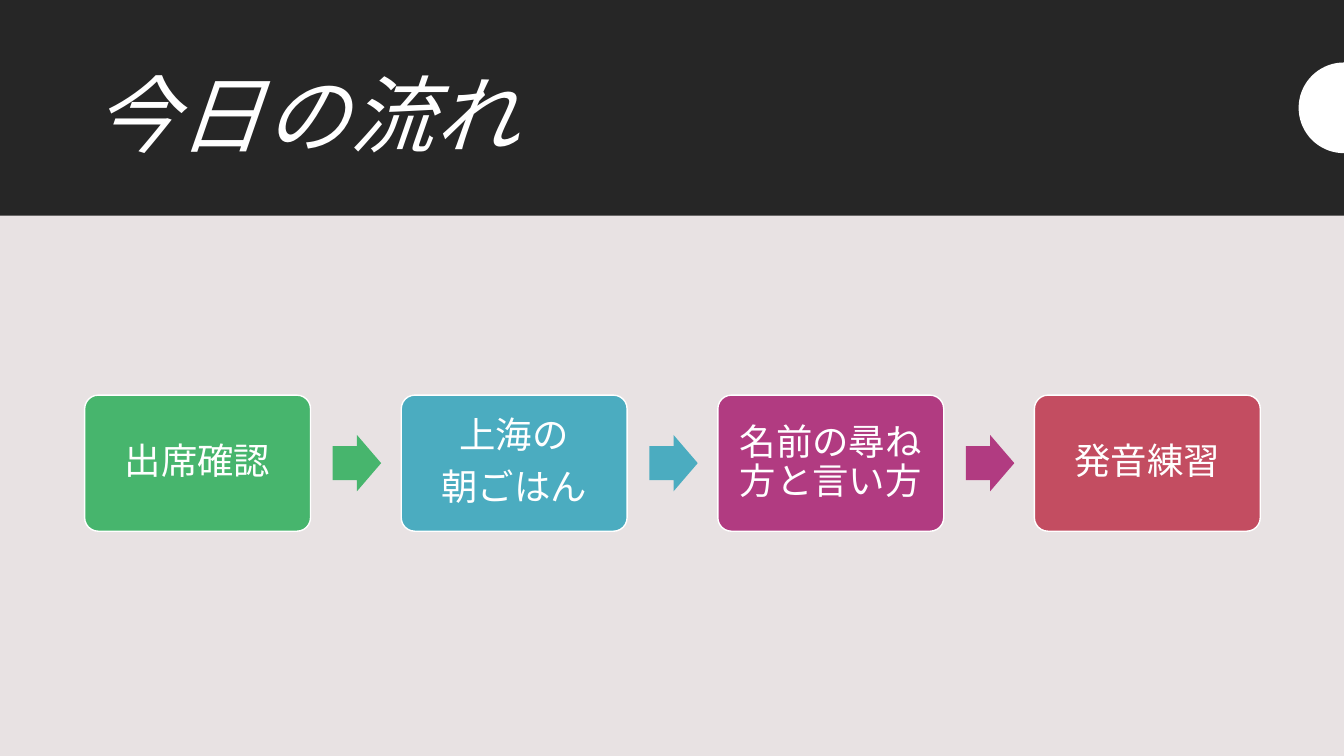
import math

from pptx import Presentation
from pptx.dml.color import RGBColor
from pptx.enum import lang, shapes, text
from pptx.util import Inches, Pt

DARK, PALE, WHITE = "262626", "E8E2E3", "FFFFFF"
STEPS = [
    ("出席確認", "47B56D"),
    ("上海の\n朝ごはん", "4BACC0"),
    ("名前の尋ね方と言い方", "B13B81"),
    ("発音練習", "C34D61"),
]
STEP_LEFT, STEP_TOP, STEP_WIDTH, STEP_HEIGHT = 0.84, 3.92, 2.24, 1.35
STEP_PITCH = 3.14
ARROW_OFFSET, ARROW_WIDTH, ARROW_HEIGHT = 2.46, 0.48, 0.56


def paint(part, fill, line=None):
    part.shadow.inherit = False
    part.fill.solid()
    part.fill.fore_color.rgb = RGBColor.from_string(fill)
    if line:
        part.line.color.rgb = RGBColor.from_string(line)
        part.line.width = Pt(1)
    else:
        part.line.fill.background()


def add_block(slide, kind, left, top, width, height, fill, line=None):
    block = slide.shapes.add_shape(
        kind, Inches(left), Inches(top), Inches(width), Inches(height))
    paint(block, fill, line)
    return block


def write(frame, words, font, size, align, after=0, italic=False):
    frame.word_wrap = True
    frame.vertical_anchor = text.MSO_ANCHOR.MIDDLE
    frame.text = words
    for paragraph in frame.paragraphs:
        paragraph.alignment = align
        paragraph.line_spacing = 0.9
        paragraph.space_after = Pt(after)
        for run in paragraph.runs:
            run.font.name = font
            run.font.size = Pt(size)
            run.font.italic = italic
            run.font.color.rgb = RGBColor.from_string(WHITE)
            run.font.language_id = lang.MSO_LANGUAGE_ID.JAPANESE


def add_title(slide, words):
    title = slide.shapes.add_textbox(
        Inches(0.83), Inches(0.46), Inches(11.67), Inches(1.45))
    write(title.text_frame, words, "Calibri", 60, text.PP_ALIGN.LEFT, italic=True)
    for run in title.text_frame.paragraphs[0].runs:
        run.font._element.set("spc", "100")


def add_half_disc(slide, centre_x, centre_y, radius):
    rim = []
    for degrees in range(90, 271, 5):
        angle = math.radians(degrees)
        rim.append((Inches(centre_x + radius * math.cos(angle)),
                    Inches(centre_y + radius * math.sin(angle))))
    builder = slide.shapes.build_freeform(*rim[0])
    builder.add_line_segments(rim[1:], close=True)
    paint(builder.convert_to_shape(), WHITE)


def add_step(slide, left, words, colour):
    step = add_block(slide, shapes.MSO_SHAPE.ROUNDED_RECTANGLE, left, STEP_TOP,
                     STEP_WIDTH, STEP_HEIGHT, colour, WHITE)
    step.adjustments[0] = 0.1
    frame = step.text_frame
    frame.margin_left = frame.margin_right = Inches(0.11)
    frame.margin_top = frame.margin_bottom = Inches(0.11)
    write(frame, words, "Roboto", 26, text.PP_ALIGN.CENTER, after=9)


def add_step_arrow(slide, left, colour):
    top = STEP_TOP + (STEP_HEIGHT - ARROW_HEIGHT) / 2
    arrow = add_block(slide, shapes.MSO_SHAPE.RIGHT_ARROW, left, top,
                      ARROW_WIDTH, ARROW_HEIGHT, colour)
    arrow.adjustments[0] = 0.6
    arrow.adjustments[1] = 0.5


def main():
    deck = Presentation()
    deck.slide_width, deck.slide_height = Inches(13.33), Inches(7.5)
    slide = deck.slides.add_slide(deck.slide_layouts[6])
    slide.background.fill.solid()
    slide.background.fill.fore_color.rgb = RGBColor.from_string(PALE)

    # Header band with title and half disc at the edge
    add_block(slide, shapes.MSO_SHAPE.RECTANGLE, 0, 0, 13.33, 2.14, DARK)
    add_title(slide, "今日の流れ")
    add_half_disc(slide, 13.33, 1.07, 0.45)

    # Lesson steps, each followed by an arrow in its own colour
    for index, (words, colour) in enumerate(STEPS):
        left = STEP_LEFT + index * STEP_PITCH
        add_step(slide, left, words, colour)
        if index < len(STEPS) - 1:
            add_step_arrow(slide, left + ARROW_OFFSET, colour)

    deck.save("out.pptx")


if __name__ == "__main__":
    main()
